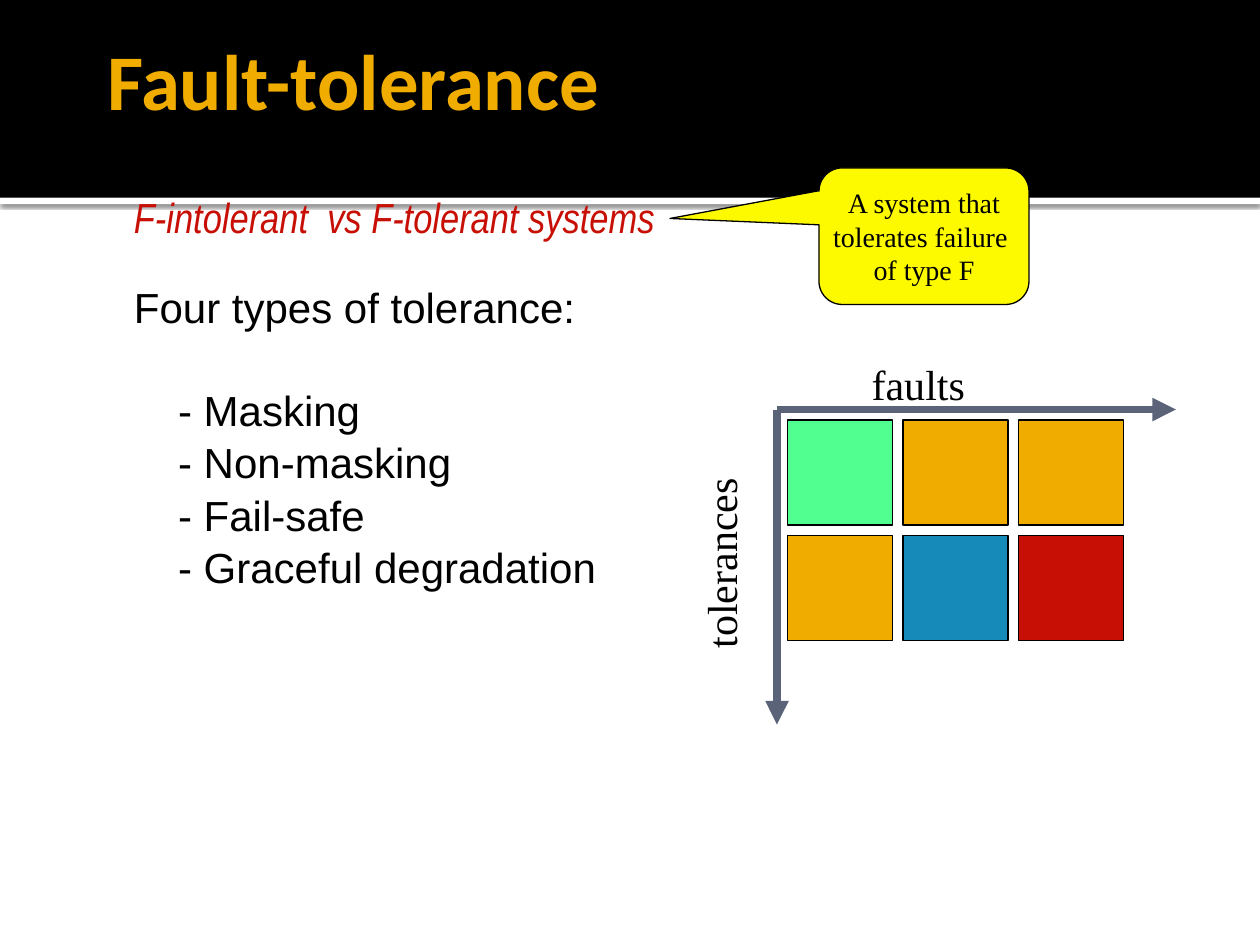
"""Build the fault-tolerance slide on a grid of twelve units to the inch."""
from lxml import etree
from pptx import Presentation, util as u
from pptx.dml.color import RGBColor
from pptx.enum import shapes, text
from pptx.oxml import parse_xml
from pptx.oxml.ns import nsdecls, qn

BLACK, WHITE, AMBER, RED = "000000", "FFFFFF", "F0AD00", "C70F05"
GREEN, BLUE, SLATE, YELLOW = "51FF91", "168BBA", "5A6378", "FDFA00"
SERIF = "Times New Roman"

TITLE = "Fault-tolerance"
COMPARISON = "F-intolerant  vs F-tolerant systems"
TYPES_INTRO = "Four types of tolerance:"
TYPES = ["- Masking", "- Non-masking", "- Fail-safe", "- Graceful degradation"]
CALLOUT = ["A system that", "tolerates failure ", "of type F"]
FAULTS, TOLERANCES = "faults", "tolerances"
MATRIX = [(GREEN, AMBER, AMBER), (AMBER, BLUE, RED)]
AXIS_ORIGIN = (74, 39)
AXIS_ENDS = [(112, 39), (74, 69)]
MATRIX_ORIGIN, CELL, STEP = (75, 40), 10, 11


def units(*values):
    return [u.Inches(value / 12) for value in values]


def rgb(value):
    return RGBColor.from_string(value)


def place(shape, *box):
    shape.left, shape.top, shape.width, shape.height = units(*box)


def set_frame(frame, insets=(0.1, 0.05, 0.1, 0.05), anchor=text.MSO_ANCHOR.TOP, wrap=True):
    frame.margin_left, frame.margin_top, frame.margin_right, frame.margin_bottom = map(u.Inches, insets)
    frame.vertical_anchor = anchor
    frame.auto_size = text.MSO_AUTO_SIZE.NONE
    frame.word_wrap = wrap


def write(frame, line, font, size, color=BLACK, bold=False, italic=False,
          align=text.PP_ALIGN.LEFT, before=0, margin=0, indent=0):
    first = frame.paragraphs[0]
    paragraph = frame.add_paragraph() if first.runs else first
    paragraph.alignment = align
    paragraph.space_before = u.Pt(before)
    properties = paragraph._p.get_or_add_pPr()
    properties.set("marL", str(u.Inches(margin)))
    properties.set("indent", str(u.Inches(indent)))
    etree.SubElement(properties, qn("a:buNone"))
    run = paragraph.add_run()
    run.text = line
    run.font.name, run.font.size = font, u.Pt(size)
    run.font.bold, run.font.italic = bold, italic
    run.font.color.rgb = rgb(color)


def add_block(slide, kind, box, fill, line=BLACK):
    block = slide.shapes.add_shape(kind, *units(*box))
    block.shadow.inherit = False
    block.fill.solid()
    block.fill.fore_color.rgb = rgb(fill)
    if line:
        block.line.color.rgb = rgb(line)
        block.line.width = u.Pt(0.75)
    else:
        block.line.fill.background()
    return block


def add_header(slide):
    rectangle = shapes.MSO_SHAPE.RECTANGLE
    rule = add_block(slide, rectangle, (0, 18.84, 120, 0.6), WHITE, None)
    rule._element.spPr.find(qn("a:effectLst")).append(parse_xml(
        f'<a:outerShdw {nsdecls("a")} blurRad="{u.Pt(2.5)}" dist="{u.Pt(0.8)}" dir="5400000">'
        f'<a:srgbClr val="{BLACK}"><a:alpha val="60000"/></a:srgbClr></a:outerShdw>'))
    band = add_block(slide, rectangle, (0, 0, 120, 18.84), BLACK, None)
    for part in (band, rule):
        slide.shapes._spTree.insert(2, part._element)


def add_axis(slide, end):
    axis = slide.shapes.add_connector(shapes.MSO_CONNECTOR.STRAIGHT, *units(*AXIS_ORIGIN, *end))
    axis.line.color.rgb = rgb(SLATE)
    axis.line.width = u.Pt(4.5)
    etree.SubElement(axis.line._get_or_add_ln(), qn("a:tailEnd"), type="triangle")
    etree.SubElement(axis._element.spPr, qn("a:effectLst"))


def add_text(slide):
    title, systems, tolerances = slide.placeholders
    place(title, 9, 0, 102, 15)
    set_frame(title.text_frame, (0.1, 0.05, 0.05, 0.05), text.MSO_ANCHOR.MIDDLE)
    write(title.text_frame, TITLE, "Calibri", 45, AMBER, bold=True)

    place(systems, 10, 17, 58, 54)
    frame = systems.text_frame
    set_frame(frame, (0.1, 0.1, 0.1, 0.05))
    write(frame, COMPARISON, "Arial Narrow", 24, RED, italic=True, before=1.2, margin=0.48, indent=-0.35)
    write(frame, TYPES_INTRO, "Arial", 24, before=22.7, margin=0.48, indent=-0.35)
    for index, kind in enumerate(TYPES):
        write(frame, kind, "Arial", 24, before=1.2 if index else 30, margin=0.48)

    place(tolerances, 63.6, 25.44, 55, 52.2)
    tolerances.rotation = 270
    set_frame(tolerances.text_frame, (0.06, 0.1, 0.1, 0.05))
    write(tolerances.text_frame, TOLERANCES, SERIF, 24, margin=1.38)


def add_matrix(slide):
    for end in AXIS_ENDS:
        add_axis(slide, end)
    faults = slide.shapes.add_textbox(*units(81.84, 33.6, 11.28, 6)).text_frame
    set_frame(faults, wrap=False)
    write(faults, FAULTS, SERIF, 24)
    left, top = MATRIX_ORIGIN
    for row, fills in enumerate(MATRIX):
        for column, fill in enumerate(fills):
            box = (left + column * STEP, top + row * STEP, CELL, CELL)
            add_block(slide, shapes.MSO_SHAPE.RECTANGLE, box, fill)


def add_callout(slide):
    callout = add_block(slide, shapes.MSO_SHAPE.ROUNDED_RECTANGULAR_CALLOUT, (78, 16, 20, 13), YELLOW)
    for index, value in enumerate((-1.21, -0.13, 0.17)):
        callout.adjustments[index] = value
    set_frame(callout.text_frame, anchor=text.MSO_ANCHOR.MIDDLE, wrap=False)
    for line in CALLOUT:
        write(callout.text_frame, line, SERIF, 16, align=text.PP_ALIGN.CENTER)


def main():
    deck = Presentation()
    deck.slide_width, deck.slide_height = units(120, 90)
    slide = deck.slides.add_slide(deck.slide_layouts[3])
    add_header(slide)
    add_text(slide)
    add_matrix(slide)
    add_callout(slide)
    deck.save("out.pptx")


if __name__ == "__main__":
    main()
